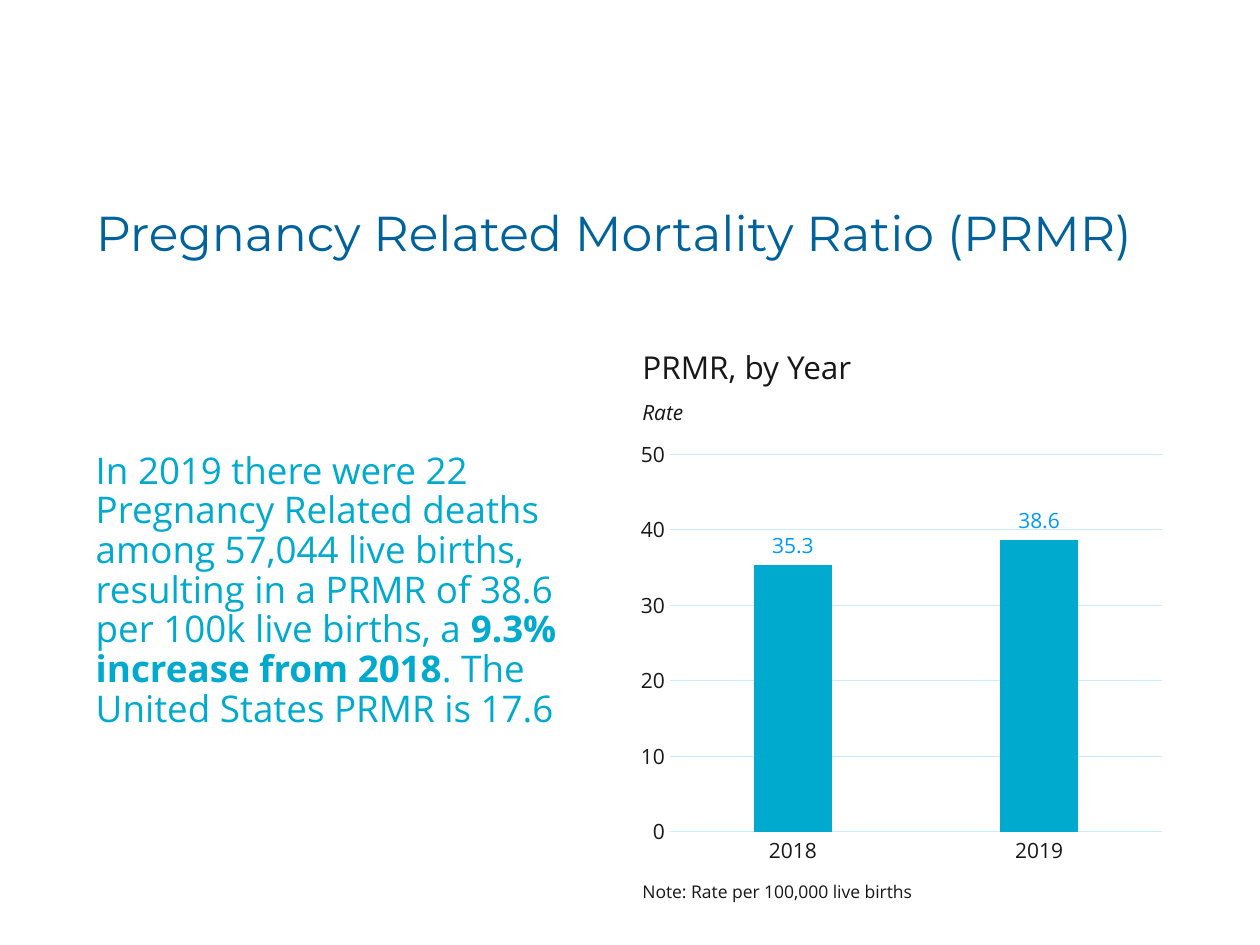
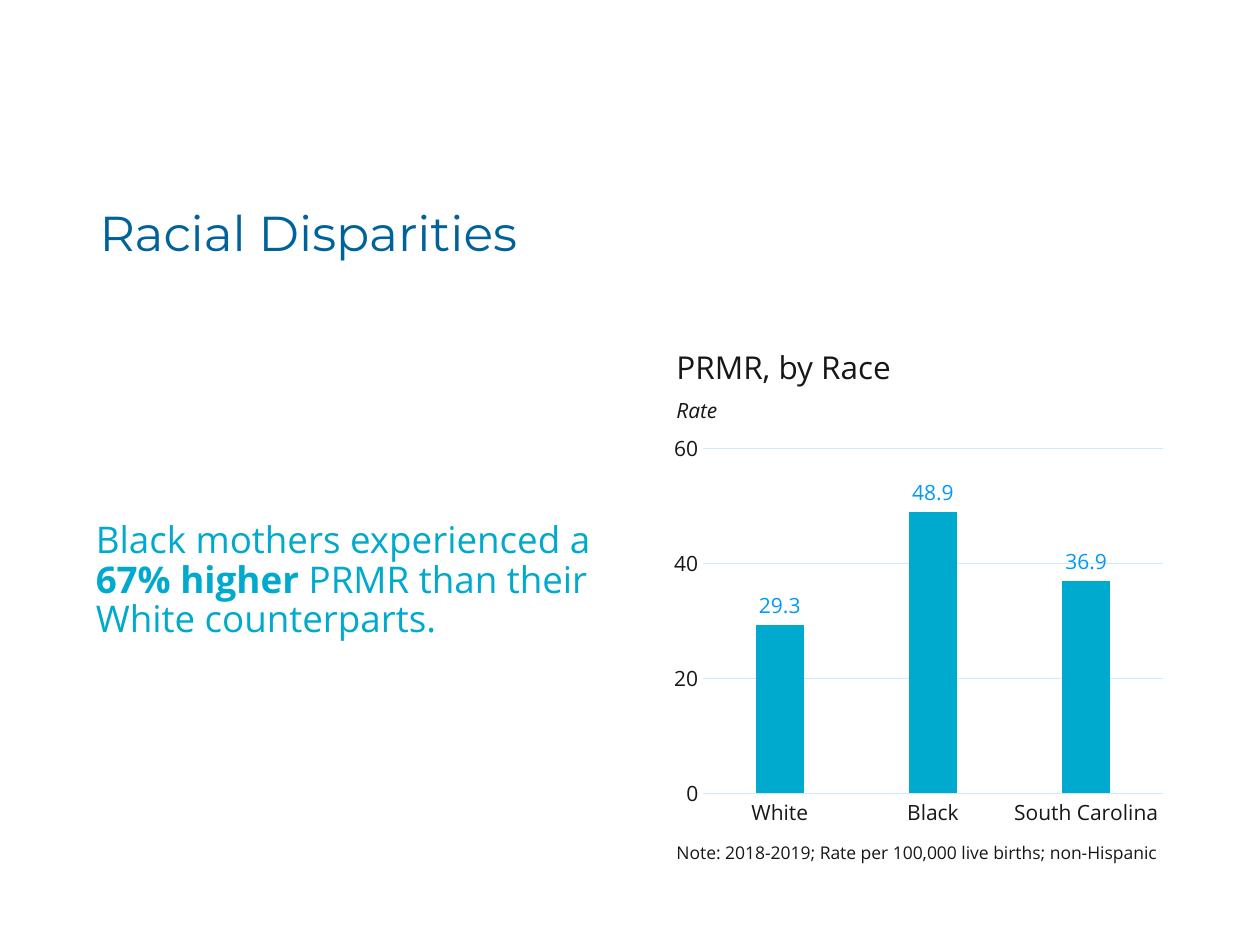
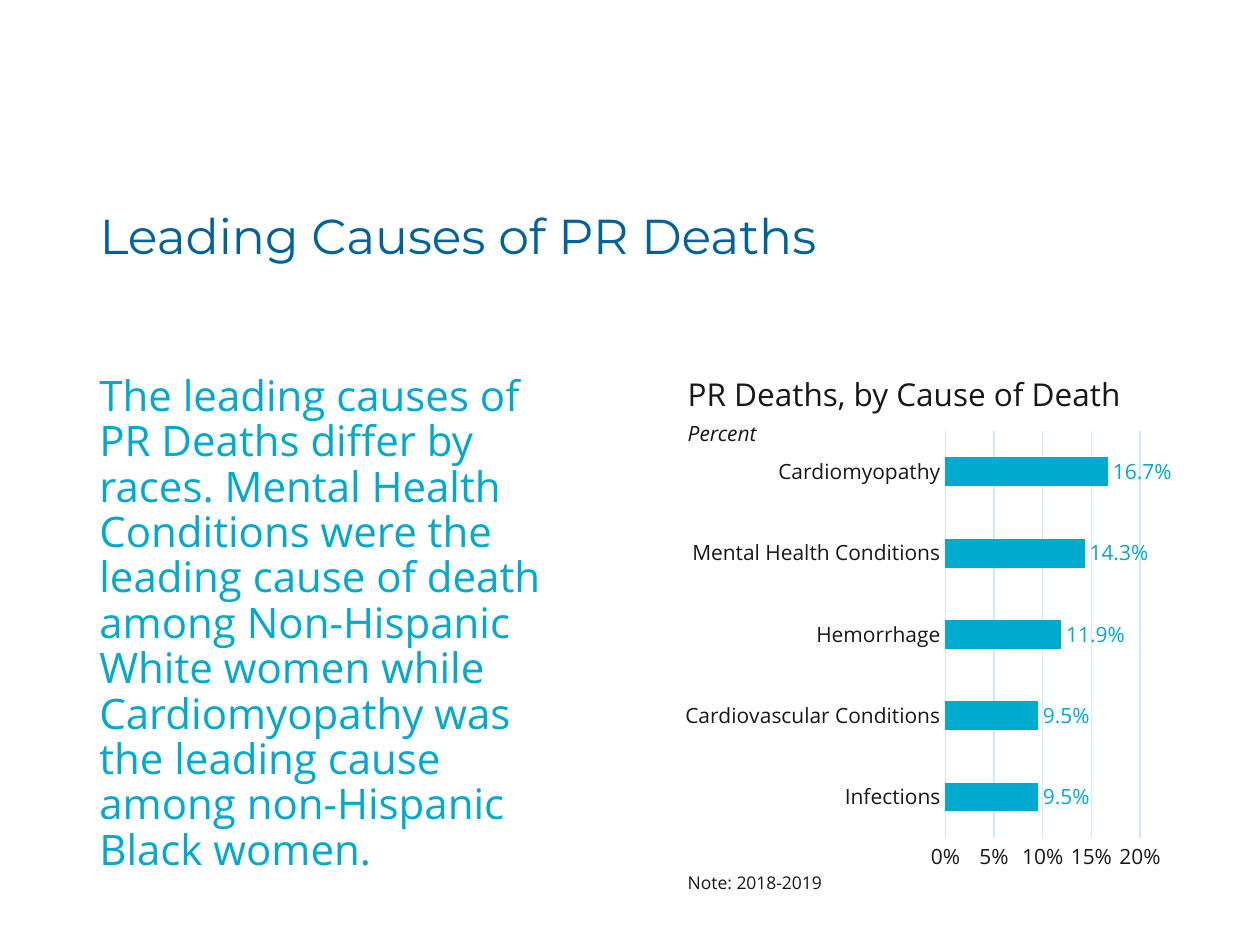
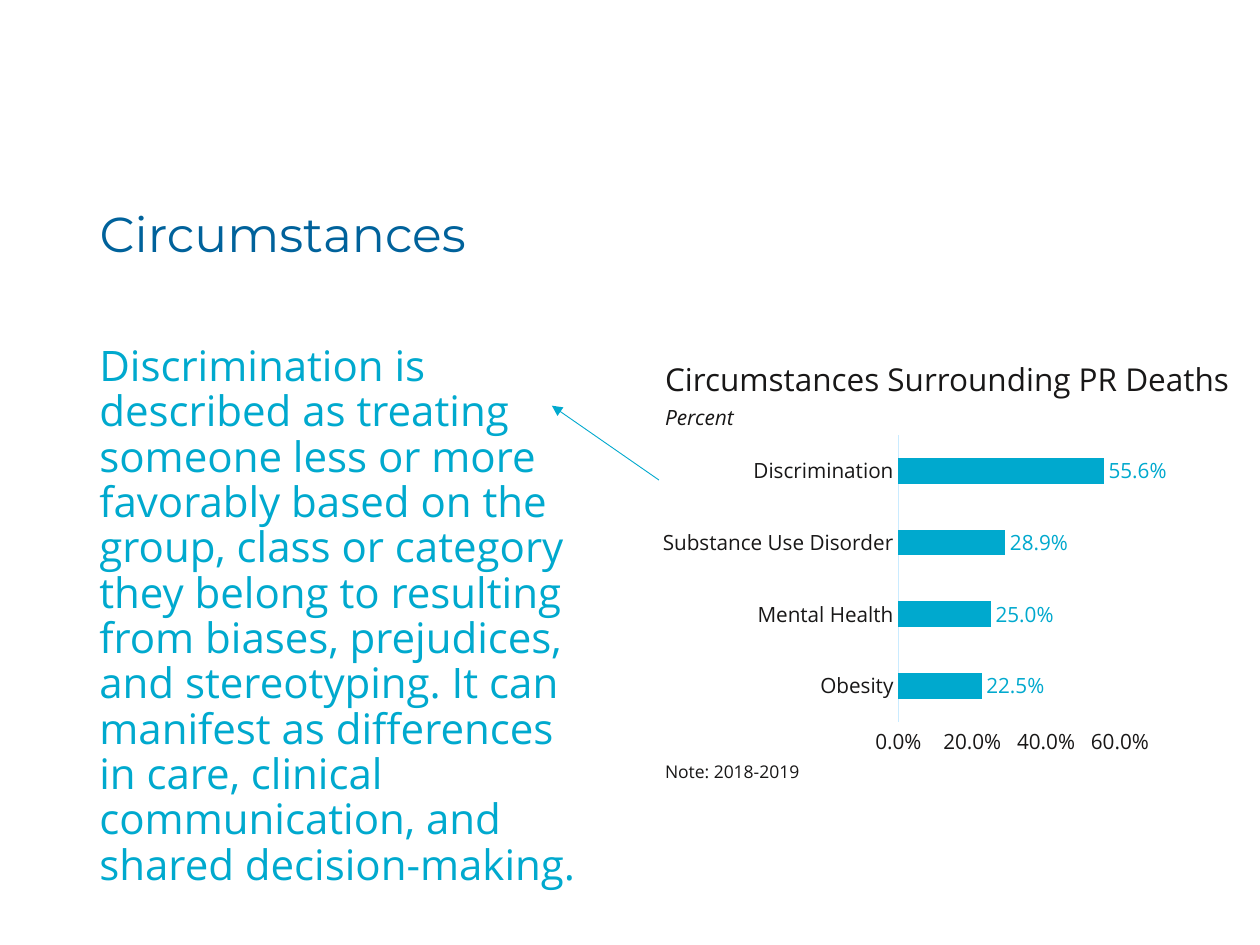
from lxml.etree import SubElement
from pptx import Presentation
from pptx.chart.data import CategoryChartData
from pptx.dml.color import RGBColor
from pptx.enum.chart import XL_CHART_TYPE as Kind, XL_LABEL_POSITION as LabelPos, XL_TICK_MARK as Tick
from pptx.enum.shapes import MSO_CONNECTOR as Connector
from pptx.enum.text import MSO_ANCHOR as Anchor, MSO_AUTO_SIZE as AutoSize, PP_ALIGN as Align
from pptx.oxml.ns import qn
from pptx.util import Emu, Pt

SCALE = 9144
NAVY, TEAL, INK, GRID, SKY = "00629B", "00A9CE", "181717", "CAEBFF", "009AF4"
HEADING_FONT, BODY_FONT = "Montserrat", "Open Sans"
WIDE, TIGHT = (10, 5), (7, 4)
LEFT = 69

COLUMNS = dict(kind=Kind.COLUMN_CLUSTERED, gap=219, overlap=-27, label_color=SKY,
               axis_format="General", label_format="General")
BARS = dict(kind=Kind.BAR_CLUSTERED, gap=182, overlap=0, label_color=TEAL,
            axis_format="0%", label_format="0.0%")

SLIDES = [
    dict(
        title="Pregnancy Related Mortality Ratio (PRMR)", title_top=142, title_inset=TIGHT,
        story=[("In 2019 there were 22 Pregnancy Related deaths among 57,044 live births, "
                "resulting in a PRMR of 38.6 per 100k live births, a ", False),
               ("9.3% increase from 2018", True),
               (". The United States PRMR is 17.6", False)],
        story_box=(355, 404, 236), story_size=21, story_inset=TIGHT,
        caption=("PRMR, by Year", 271, 431), unit=("Rate", 312),
        note=("Note: Rate per 100,000 live births", 694, 431),
        chart_box=(500, 342, 431, 352),
        chart=dict(COLUMNS, rates={"2018": 35.3, "2019": 38.6}, top=50, step=10, grid=True),
    ),
    dict(
        title="Racial Disparities", title_top=142, title_inset=WIDE,
        story=[("Black mothers experienced a ", False), ("67% higher ", True),
               ("PRMR than their White counterparts.", False)],
        story_box=(410, 431, 108), story_size=21, story_inset=TIGHT,
        caption=("PRMR, by Race", 271, 431), unit=("Rate", 311),
        note=("Note: 2018-2019; Rate per 100,000 live births; non-Hispanic", 663, 431),
        chart_box=(527, 338, 404, 325),
        chart=dict(COLUMNS, rates={"White": 29.3, "Black": 48.9, "South Carolina": 36.9},
                   top=60, step=20, grid=True),
    ),
    dict(
        title="Leading Causes of PR Deaths", title_top=144, title_inset=WIDE,
        story=[("The leading causes of PR Deaths differ by races. Mental Health Conditions were "
                "the leading cause of death among Non-Hispanic White women while Cardiomyopathy "
                "was the leading cause among non-Hispanic Black women.", False)],
        story_box=(293, 401, 414), story_size=24, story_inset=WIDE,
        caption=("PR Deaths, by Cause of Death", 293, 423), unit=("Percent", 329),
        note=("Note: 2018-2019", 687, 408),
        chart_box=(536, 335, 394, 364),
        chart=dict(BARS, rates={"Infections": 0.095, "Cardiovascular Conditions": 0.095,
                                "Hemorrhage": 0.119, "Mental Health Conditions": 0.143,
                                "Cardiomyopathy": 0.167},
                   top=0.2, step=0.05, grid=True),
    ),
    dict(
        title="Circumstances", title_top=143, title_inset=WIDE,
        story=[("Discrimination is described as treating someone less or more favorably based on "
                "the group, class or category they belong to resulting from biases, prejudices, "
                "and stereotyping. It can manifest as differences in care, clinical "
                "communication, and shared decision-making.", False)],
        story_box=(269, 401, 438), story_size=24, story_inset=WIDE,
        caption=("Circumstances Surrounding PR Deaths", 281, 470), unit=("Percent", 316),
        note=("Note: 2018-2019", 599, 408),
        chart_box=(518, 340, 408, 265),
        chart=dict(BARS, rates={"Obesity": 0.225, "Mental Health": 0.25,
                                "Substance Use Disorder": 0.289, "Discrimination": 0.556},
                   top=0.6, step=0.2, grid=False, axis_format="0.0%"),
        arrow=(523, 381, 438, 322),
    ),
]


def px(*lengths):
    return [Emu(length * SCALE) for length in lengths]


def rgb(color):
    return RGBColor.from_string(color)


def style(font, size, color, name=BODY_FONT, bold=False, italic=False):
    font.name, font.size, font.bold, font.italic = name, Pt(size), bold, italic
    font.color.rgb = rgb(color)


def set_line(line, color, width):
    line.color.rgb = rgb(color)
    line.width = Pt(width)


def set_frame(frame, inset):
    frame.word_wrap = True
    frame.auto_size = AutoSize.NONE
    frame.margin_left, frame.margin_top = frame.margin_right, frame.margin_bottom = px(*inset)


def add_title(slide, words, top, inset):
    title = slide.shapes.title
    title.left, title.top, title.width, title.height = px(LEFT, top, 862, 90)
    frame = title.text_frame
    frame.text = words
    set_frame(frame, inset)
    frame.vertical_anchor = Anchor.MIDDLE
    heading = frame.paragraphs[0]
    heading.alignment = Align.LEFT
    heading.line_spacing = 0.9
    style(heading.runs[0].font, 28, NAVY, HEADING_FONT)


def add_words(slide, box, pieces, size, color, inset=WIDE, spacing=None, italic=False):
    frame = slide.shapes.add_textbox(*px(*box)).text_frame
    set_frame(frame, inset)
    paragraph = frame.paragraphs[0]
    paragraph.line_spacing = spacing
    for words, bold in pieces:
        run = paragraph.add_run()
        run.text = words
        style(run.font, size, color, bold=bold, italic=italic)


def add_rates(slide, box, kind, rates, top, step, grid, gap, overlap,
              label_color, axis_format, label_format):
    numbers = CategoryChartData(number_format=label_format)
    numbers.categories = list(rates)
    numbers.add_series("Series 1", list(rates.values()))
    chart = slide.shapes.add_chart(kind, *px(*box), numbers).chart
    chart.has_title = chart.has_legend = False
    style(chart.font, 10, NAVY)

    groups, scale = chart.category_axis, chart.value_axis
    for axis in (groups, scale):
        axis.major_tick_mark = axis.minor_tick_mark = Tick.NONE
        style(axis.tick_labels.font, 12, INK)
    set_line(groups.format.line, GRID, 0.75)
    scale.format.line.fill.background()
    scale.minimum_scale, scale.maximum_scale, scale.major_unit = 0, top, step
    scale.tick_labels.number_format = axis_format
    scale.tick_labels.number_format_is_linked = False
    scale.has_major_gridlines = grid
    if grid:
        set_line(scale.major_gridlines.format.line, GRID, 0.75)

    plot = chart.plots[0]
    plot.gap_width, plot.overlap, plot.vary_by_categories = gap, overlap, False
    bars = plot.series[0]
    bars.format.fill.solid()
    bars.format.fill.fore_color.rgb = rgb(TEAL)
    labels = bars.data_labels
    labels.show_value = True
    labels.position = LabelPos.OUTSIDE_END
    labels.number_format = label_format
    labels.number_format_is_linked = False
    style(labels.font, 12, label_color)


def add_arrow(slide, ends):
    arrow = slide.shapes.add_connector(Connector.STRAIGHT, *px(*ends))
    set_line(arrow.line, TEAL, 0.5)
    SubElement(arrow.line._get_or_add_ln(), qn("a:tailEnd"), type="triangle")
    SubElement(arrow._element.spPr, qn("a:effectLst"))


def build_slide(deck, content):
    slide = deck.slides.add_slide(deck.slide_layouts[5])
    add_title(slide, content["title"], content["title_top"], content["title_inset"])
    add_rates(slide, content["chart_box"], **content["chart"])
    add_words(slide, (LEFT, *content["story_box"]), content["story"], content["story_size"],
              TEAL, content["story_inset"], 0.9)

    chart_left = content["chart_box"][0]
    caption, caption_top, caption_width = content["caption"]
    unit, unit_top = content["unit"]
    note, note_top, note_width = content["note"]
    add_words(slide, (chart_left, caption_top, caption_width, 40), [(caption, False)], 18, INK)
    add_words(slide, (chart_left, unit_top, 236, 30), [(unit, False)], 12, INK, italic=True)
    add_words(slide, (chart_left, note_top, note_width, 27), [(note, False)], 10, INK)
    if "arrow" in content:
        add_arrow(slide, content["arrow"])


def main():
    deck = Presentation()
    deck.slide_width, deck.slide_height = px(1000, 750)
    for content in SLIDES:
        build_slide(deck, content)
    deck.save("out.pptx")


if __name__ == "__main__":
    main()
